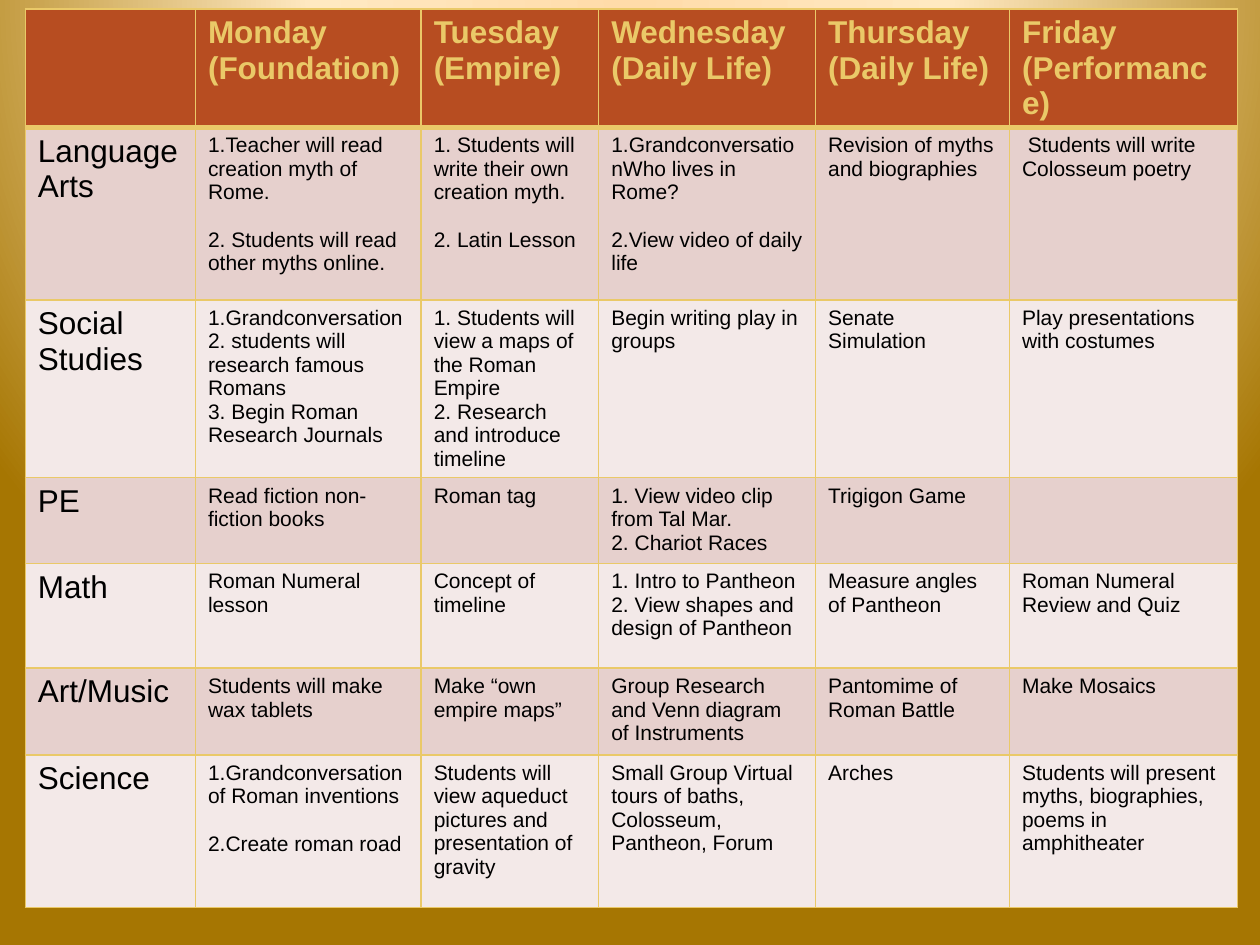
from dataclasses import dataclass

from lxml import etree
from pptx import Presentation
from pptx.dml.color import RGBColor
from pptx.enum.text import MSO_ANCHOR
from pptx.oxml import parse_xml
from pptx.oxml.ns import nsdecls, qn
from pptx.util import Cm, Pt

COLORS = {
    "header": "B74D21", "gold": "EAC968", "ink": "000000",
    "dark_band": "E6D0CD", "light_band": "F3E9E8",
}
BACKGROUND_STOPS = {0: "FFDBA9", 40: "FFE9C2", 100: "A67602"}
COLUMN_WIDTHS = [3.43, 4.55, 3.58, 4.37, 3.91, 4.6]
BLANK_LINE = Pt(13.8)


@dataclass
class Row:
    """One table row; a newline starts a paragraph, two leave a gap."""
    height: float
    texts: list[str]


@dataclass
class CellStyle:
    fill: str
    font: dict
    top: float = 1
    bottom: float = 1


HEADING_FONT = {"name": "Arial", "size": Pt(18), "bold": True}
SUBJECT_FONT = {"name": "Arial", "size": Pt(18), "bold": False}
TASK_FONT = {"name": "Arial", "size": Pt(12), "bold": False}

ROWS = [
    Row(2.36, ["", "Monday\n(Foundation)", "Tuesday\n(Empire)",
               "Wednesday\n(Daily Life)", "Thursday\n(Daily Life)",
               "Friday\n(Performance)"]),
    Row(3.48, ["Language Arts",
               "1.Teacher will read creation myth of Rome.\n\n"
               "2. Students will read other myths online.",
               "1. Students will write their own creation myth.\n\n"
               "2. Latin Lesson",
               "1.GrandconversationWho lives in Rome?\n\n"
               "2.View video of daily life",
               "Revision of myths and biographies",
               " Students will write Colosseum poetry"]),
    Row(3.58, ["Social Studies",
               "1.Grandconversation 2. students will research famous Romans\n"
               "3. Begin Roman Research Journals",
               "1. Students will view a maps of the Roman Empire\n"
               "2. Research and introduce timeline",
               "Begin writing play in groups", "Senate Simulation",
               "Play presentations with costumes"]),
    Row(1.73, ["PE", "Read fiction non-fiction books", "Roman tag",
               "1. View video clip from Tal Mar.\n2. Chariot Races",
               "Trigigon Game", ""]),
    Row(2.11, ["Math", "Roman Numeral lesson", "Concept of timeline",
               "1. Intro to Pantheon\n2. View shapes and design of Pantheon",
               "Measure angles of Pantheon", "Roman Numeral Review and Quiz"]),
    Row(1.75, ["Art/Music", "Students will make wax tablets",
               "Make “own empire maps”",
               "Group Research and Venn diagram of Instruments",
               "Pantomime of Roman Battle", "Make Mosaics"]),
    Row(3.08, ["Science",
               "1.Grandconversation\nof Roman inventions\n\n2.Create roman road",
               "Students will view aqueduct pictures and presentation of gravity",
               "Small Group Virtual tours of baths, Colosseum, Pantheon, Forum",
               "Arches",
               "Students will present myths, biographies, poems in amphitheater"]),
]


def paint_background(page) -> None:
    page.background.fill.solid()
    properties = page.element.find(".//" + qn("p:bgPr"))
    stops = "".join(
        f'<a:gs pos="{percent * 1000}"><a:srgbClr val="{color}"/></a:gs>'
        for percent, color in BACKGROUND_STOPS.items())
    gradient = parse_xml(
        f'<a:gradFill {nsdecls("a")} rotWithShape="1"><a:gsLst>{stops}</a:gsLst>'
        '<a:path path="circle"><a:fillToRect l="50000" t="-80000" r="50000" '
        'b="180000"/></a:path></a:gradFill>')
    properties.replace(properties[0], gradient)


def add_borders(cell, widths: dict[str, float]) -> None:
    """Draw gold edges; they must come before the fill in the cell's XML."""
    properties = cell._tc.get_or_add_tcPr()
    for edge, width in widths.items():
        line = etree.SubElement(properties, qn(f"a:ln{edge}"), w=str(Pt(width)))
        fill = etree.SubElement(line, qn("a:solidFill"))
        etree.SubElement(fill, qn("a:srgbClr"), val=COLORS["gold"])


def write_text(cell, text: str, font: dict, color: str) -> None:
    frame = cell.text_frame
    para = frame.paragraphs[0]
    gap = False
    for index, line in enumerate(text.split("\n")):
        if not line:
            gap = True
            continue
        if index:
            para = frame.add_paragraph()
        if gap:
            para.space_before = BLANK_LINE
            gap = False
        span = para.add_run()
        span.text = line
        for name, value in font.items():
            setattr(span.font, name, value)
        span.font.color.rgb = RGBColor.from_string(COLORS[color])


def style_for(row: int, column: int) -> CellStyle:
    if row == 0:
        return CellStyle("header", HEADING_FONT, bottom=3)
    return CellStyle("dark_band" if row % 2 else "light_band",
                     TASK_FONT if column else SUBJECT_FONT,
                     top=3 if row == 1 else 1)


def add_schedule(page) -> None:
    table = page.shapes.add_table(
        len(ROWS), len(COLUMN_WIDTHS), Cm(0.51), Cm(0.18),
        Cm(sum(COLUMN_WIDTHS)), Cm(sum(row.height for row in ROWS))).table
    for column, width in zip(table.columns, COLUMN_WIDTHS):
        column.width = Cm(width)
    for r, row in enumerate(ROWS):
        table.rows[r].height = Cm(row.height)
        for c, text in enumerate(row.texts):
            cell = table.cell(r, c)
            style = style_for(r, c)
            add_borders(cell, {"L": 1, "R": 1, "T": style.top, "B": style.bottom})
            cell.fill.solid()
            cell.fill.fore_color.rgb = RGBColor.from_string(COLORS[style.fill])
            cell.vertical_anchor = MSO_ANCHOR.TOP
            write_text(cell, text, style.font, "ink" if r else "gold")


def main() -> None:
    deck = Presentation()
    deck.slide_width, deck.slide_height = Cm(25.4), Cm(19.05)
    page = deck.slides.add_slide(deck.slide_layouts[6])
    paint_background(page)
    add_schedule(page)
    deck.save("out.pptx")


if __name__ == "__main__":
    main()
